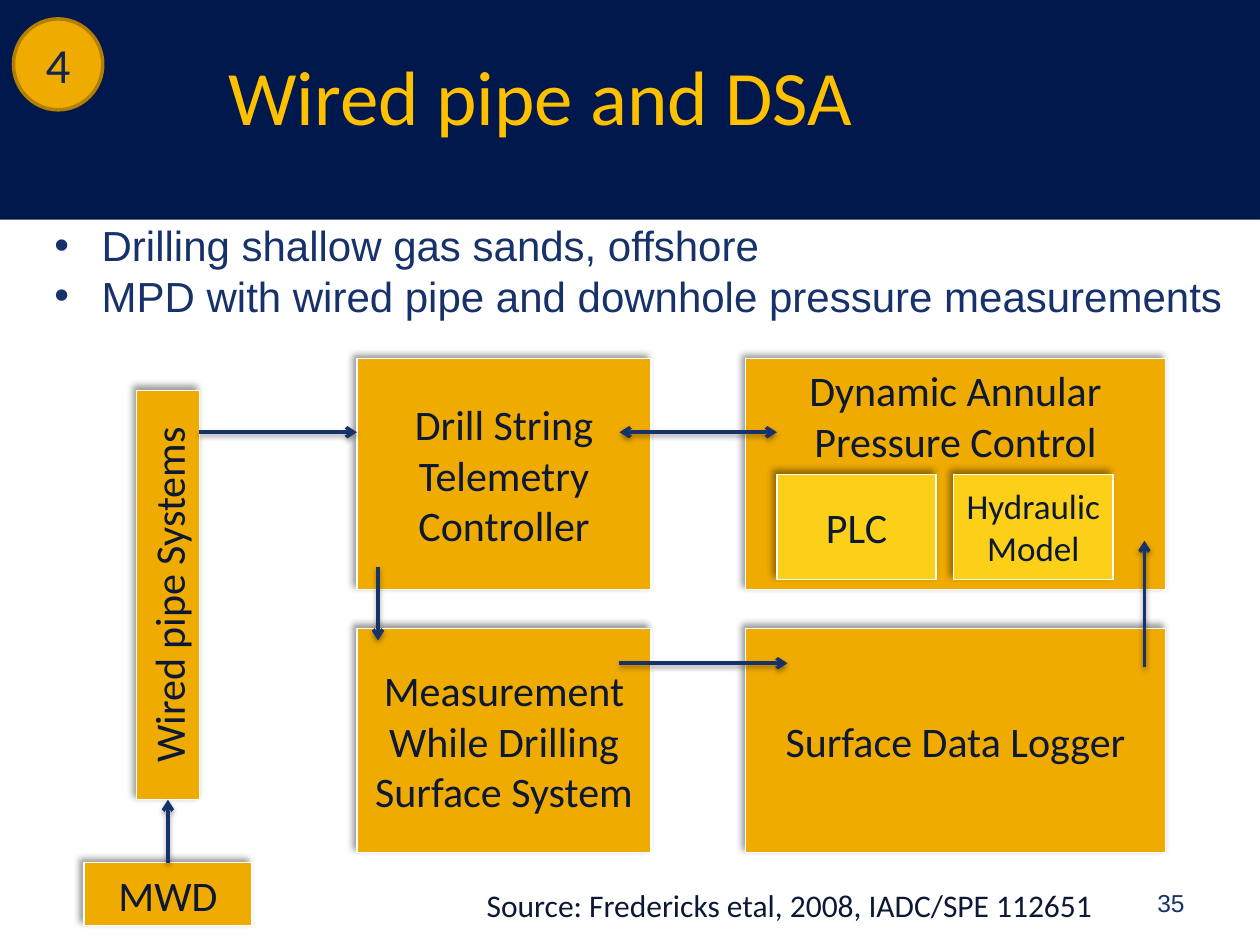
from lxml.etree import SubElement
from pptx import Presentation
from pptx.dml.color import RGBColor
from pptx.enum.shapes import MSO_CONNECTOR, MSO_SHAPE
from pptx.enum.text import MSO_ANCHOR as Anchor, PP_ALIGN as Align
from pptx.oxml.ns import qn
from pptx.util import Pt

COLORS = {
    "night": "00184C", "white": "FFFFFF", "gold": "F0AB00", "yellow": "FCCF18",
    "title": "FFC000", "rim": "B27F00", "blue": "17316A", "ink": "0C1835",
    "badge": "112550", "black": "000000",
}


def rgb(name):
    return RGBColor.from_string(COLORS[name])


def add_shadow(properties, alpha, blur, distance, angle):
    effects = SubElement(properties, qn("a:effectLst"))
    shadow = SubElement(effects, qn("a:outerShdw"), blurRad=str(Pt(blur)),
                        dist=str(Pt(distance)), dir=str(angle * 60000),
                        algn="ctr", rotWithShape="0")
    color = SubElement(shadow, qn("a:srgbClr"), val=COLORS["black"])
    SubElement(color, qn("a:alpha"), val=str(alpha * 1000))


def write(frame, text, size=24, font="Calibri", color="ink", align=Align.CENTER,
          anchor=Anchor.MIDDLE, wrap=True, bullet_indent=0):
    """Fill the frame with one paragraph for each line of text."""
    frame.word_wrap = wrap
    frame.vertical_anchor = anchor
    for index, line in enumerate(text.split("\n")):
        para = frame.add_paragraph() if index else frame.paragraphs[0]
        para.alignment = align
        if bullet_indent:
            settings = para._p.get_or_add_pPr()
            settings.set("marL", str(Pt(bullet_indent)))
            settings.set("indent", str(-Pt(bullet_indent)))
            SubElement(settings, qn("a:buFont"), typeface="Arial")
            SubElement(settings, qn("a:buChar"), char="•")
        span = para.add_run()
        span.text = line
        span.font.size = Pt(size)
        span.font.name = font
        span.font.bold = False
        span.font.color.rgb = rgb(color)


class SlideBuilder:
    def __init__(self, deck):
        self.page = deck.slides.add_slide(deck.slide_layouts[5])
        self.shapes = self.page.shapes
        fill = self.page.background.fill
        fill.solid()
        fill.fore_color.rgb = rgb("night")

    def title(self, text, left, top, width, height, **style):
        box = self.shapes.title
        box.left, box.top, box.width, box.height = map(Pt, (left, top, width, height))
        write(box.text_frame, text, **style)

    def shape(self, left, top, width, height, kind=MSO_SHAPE.RECTANGLE,
              fill="gold", line=None, line_width=0.75):
        shape = self.shapes.add_shape(kind, *map(Pt, (left, top, width, height)))
        shape.shadow.inherit = False
        shape.fill.solid()
        shape.fill.fore_color.rgb = rgb(fill)
        if line:
            shape.line.color.rgb = rgb(line)
            shape.line.width = Pt(line_width)
        else:
            shape.line.fill.background()
        return shape

    def shadowed(self, shape, *shadow):
        properties = shape._element.spPr
        for effects in properties.findall(qn("a:effectLst")):
            properties.remove(effects)
        add_shadow(properties, *shadow)

    def block(self, text, left, top, width, height, fill="gold", vertical=False, **style):
        block = self.shape(left, top, width, height, fill=fill, line="white")
        self.shadowed(block, 40, 4, 3, 225)
        frame = block.text_frame
        frame.margin_left = frame.margin_right = Pt(3.6)
        if vertical:
            frame._txBody.bodyPr.set("vert", "vert270")
        write(frame, text, **style)

    def badge(self, text, left, top, width, height):
        badge = self.shape(left, top, width, height, MSO_SHAPE.OVAL,
                           line="rim", line_width=2)
        write(badge.text_frame, text, size=28, color="badge")

    def text(self, text, left, top, width, height, **style):
        box = self.shapes.add_textbox(*map(Pt, (left, top, width, height)))
        write(box.text_frame, text, **style)

    def arrow(self, x1, y1, x2, y2, both_ends=False):
        arrow = self.shapes.add_connector(MSO_CONNECTOR.STRAIGHT, *map(Pt, (x1, y1, x2, y2)))
        arrow.line.color.rgb = rgb("blue")
        arrow.line.width = Pt(2)
        outline = arrow.line._get_or_add_ln()
        for end in ("headEnd", "tailEnd") if both_ends else ("tailEnd",):
            SubElement(outline, qn(f"a:{end}"), type="arrow")
        add_shadow(arrow._element.spPr, 38, 3.1, 1.6, 90)


def main():
    deck = Presentation()
    deck.slide_width, deck.slide_height = Pt(720), Pt(540)
    slide = SlideBuilder(deck)

    band = slide.shape(0, 125.5, 720, 414.5, fill="white")
    slide.shadowed(band, 35, 3.1, 1.8, 90)
    slide.title("Wired pipe and DSA", 32.5, 24, 553, 90,
                size=44, color="title", anchor=Anchor.TOP)
    slide.badge("4", 7.7, 10.8, 51, 52)
    slide.text("Drilling shallow gas sands, offshore\n"
               "MPD with wired pipe and downhole pressure measurements",
               24, 122, 689, 65.5, font="Arial", color="blue", align=Align.LEFT,
               anchor=Anchor.TOP, wrap=False, bullet_indent=27)

    left_column, right_column = (204, 168), (426, 240)
    upper_row, lower_row = (205, 132), (359, 128)
    systems = [
        ("Drill String Telemetry\nController", left_column, upper_row, Anchor.MIDDLE),
        ("Dynamic Annular Pressure Control", right_column, upper_row, Anchor.TOP),
        ("Measurement While Drilling Surface System", left_column, lower_row, Anchor.MIDDLE),
        ("Surface Data Logger", right_column, lower_row, Anchor.MIDDLE),
    ]
    for text, (left, width), (top, height), anchor in systems:
        slide.block(text, left, top, width, height, anchor=anchor)

    slide.block("Wired pipe Systems", 78, 223, 36, 234, vertical=True)
    slide.block("MWD", 48, 493, 96, 36)
    slide.block("PLC", 444, 271, 91, 60, fill="yellow")
    slide.block("Hydraulic\nModel", 545, 271, 91, 60, fill="yellow", size=20)

    slide.arrow(114, 247, 204, 247)
    slide.arrow(96, 493, 96, 457)
    slide.arrow(354, 247, 444, 247, both_ends=True)
    slide.arrow(654, 381, 654, 309)
    slide.arrow(354, 379, 450, 379)
    slide.arrow(216, 324, 216, 366)

    slide.text("Source: Fredericks etal, 2008, IADC/SPE 112651", 271, 502.5, 373, 36,
               size=18, align=Align.LEFT, anchor=Anchor.TOP)
    slide.text("35", 534, 498, 150, 36, size=14, font="Arial", color="blue",
               align=Align.RIGHT)
    deck.save("out.pptx")


if __name__ == "__main__":
    main()
